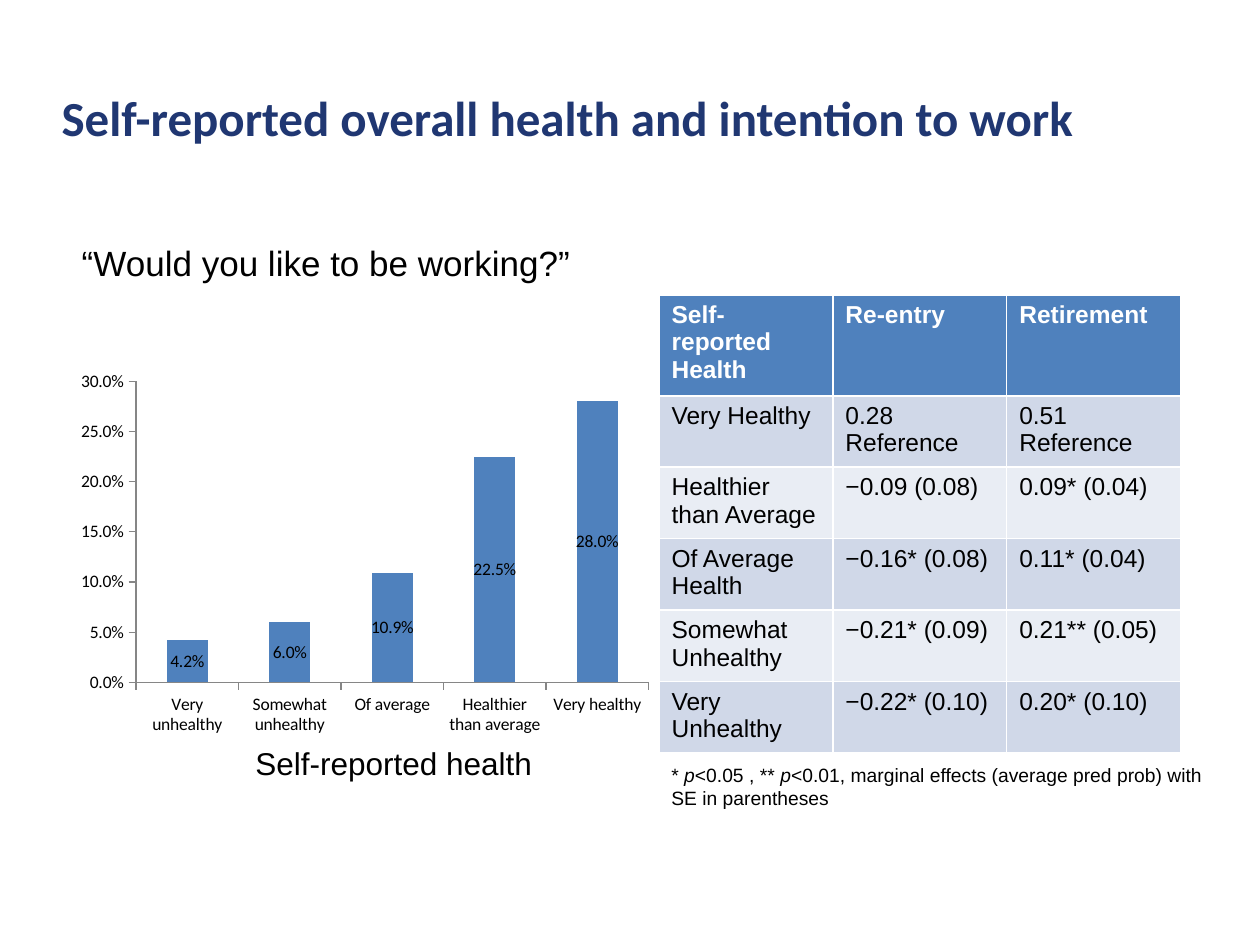
from pptx import Presentation, util as u
from pptx.chart.data import CategoryChartData
from pptx.dml.color import RGBColor
from pptx.enum import chart as ch, text

COLORS = {"title": "203772", "blue": "4F81BD", "band": "D0D8E8", "pale": "E9EDF4",
          "black": "000000", "white": "FFFFFF", "axis": "868686"}
LEFT, MID = 0.055, 0.523


def rgb(name):
    return RGBColor.from_string(COLORS[name])


def write(p, content, size=14, font="Arial", color="black", bold=False, italic=False):
    r = p.add_run()
    r.text = content
    f = r.font
    f.size, f.name, f.bold, f.italic = u.Pt(size), font, bold, italic
    f.color.rgb = rgb(color)


class Deck:
    def __init__(self, width=10, height=7.5):
        self.prs = Presentation()
        self.prs.slide_width, self.prs.slide_height = u.Inches(width), u.Inches(height)
        self.s = self.prs.slides.add_slide(self.prs.slide_layouts[6])

    def box(self, x, y, w, h):
        W, H = self.prs.slide_width, self.prs.slide_height
        return round(x * W), round(y * H), round(w * W), round(h * H)

    def label(self, at, runs, align=text.PP_ALIGN.LEFT, anchor=text.MSO_ANCHOR.TOP, **style):
        tf = self.s.shapes.add_textbox(*self.box(*at)).text_frame
        tf.word_wrap, tf.vertical_anchor = True, anchor
        p = tf.paragraphs[0]
        p.alignment = align
        for content, italic in runs:
            write(p, content, italic=italic, **style)

    def table(self, at, rows):
        table = self.s.shapes.add_table(len(rows), len(rows[0]), *self.box(*at)).table
        for i, row in enumerate(rows):
            fill = "blue" if i == 0 else ("pale", "band")[i % 2]
            for j, content in enumerate(row):
                cell = table.cell(i, j)
                cell.fill.solid()
                cell.fill.fore_color.rgb = rgb(fill)
                tf = cell.text_frame
                for k, line in enumerate(content.split("\n")):
                    p = tf.add_paragraph() if k else tf.paragraphs[0]
                    write(p, line, color="black" if i else "white", bold=i == 0)

    def columns(self, at, name, values):
        data = CategoryChartData(number_format="0.0%")
        data.categories = list(values)
        data.add_series(name, list(values.values()))
        chart = self.s.shapes.add_chart(
            ch.XL_CHART_TYPE.COLUMN_STACKED, *self.box(*at), data).chart
        chart.has_legend = chart.has_title = False
        chart.font.size, chart.font.name = u.Pt(10), "Calibri"
        chart.font.color.rgb = rgb("black")
        for axis in (chart.category_axis, chart.value_axis):
            axis.has_major_gridlines = False
            axis.major_tick_mark = ch.XL_TICK_MARK.OUTSIDE
            axis.format.line.color.rgb = rgb("axis")
        axis = chart.value_axis
        axis.minimum_scale, axis.maximum_scale, axis.major_unit = 0, 0.3, 0.05
        axis.tick_labels.number_format = "0.0%"
        axis.tick_labels.number_format_is_linked = False
        plot = chart.plots[0]
        plot.vary_by_categories, plot.gap_width, plot.overlap = False, 150, 100
        fill = plot.series[0].format.fill
        fill.solid()
        fill.fore_color.rgb = rgb("blue")
        plot.has_data_labels = True
        labels = plot.data_labels
        labels.show_value = True
        labels.number_format, labels.number_format_is_linked = "0.0%", False
        labels.position = ch.XL_LABEL_POSITION.CENTER


def main():
    deck = Deck()
    deck.label((0.039, 0.04, 0.938, 0.167),
               [("Self-reported overall health and intention to work", False)],
               anchor=text.MSO_ANCHOR.MIDDLE, size=28, font="Calibri", color="title", bold=True)
    deck.table((MID, 0.312, 0.414, 0.408), [
        ("Self-reported Health", "Re-entry", "Retirement"),
        ("Very Healthy", "0.28\nReference", "0.51\nReference"),
        ("Healthier than Average", "−0.09 (0.08)", "0.09* (0.04)"),
        ("Of Average Health", "−0.16* (0.08)", "0.11* (0.04)"),
        ("Somewhat Unhealthy", "−0.21* (0.09)", "0.21** (0.05)"),
        ("Very Unhealthy", "−0.22* (0.10)", "0.20* (0.10)"),
    ])
    deck.label((LEFT, 0.249, 0.688, 0.059), [("“Would you like to be working?”", False)], size=20)
    deck.columns((LEFT, 0.385, 0.469, 0.4), "Series 1", {
        "Very unhealthy": 0.042, "Somewhat unhealthy": 0.06, "Of average": 0.109,
        "Healthier than average": 0.225, "Very healthy": 0.28})
    deck.label((0.117, 0.781, 0.391, 0.053), [("Self-reported health", False)],
               align=text.PP_ALIGN.CENTER, size=18)
    deck.label((MID, 0.801, 0.453, 0.063), [
        ("* ", False), ("p", True), ("<0.05 , ** ", False), ("p", True),
        ("<0.01, marginal effects (average pred prob) with SE in parentheses", False)], size=11)
    deck.prs.save("out.pptx")


if __name__ == "__main__":
    main()
